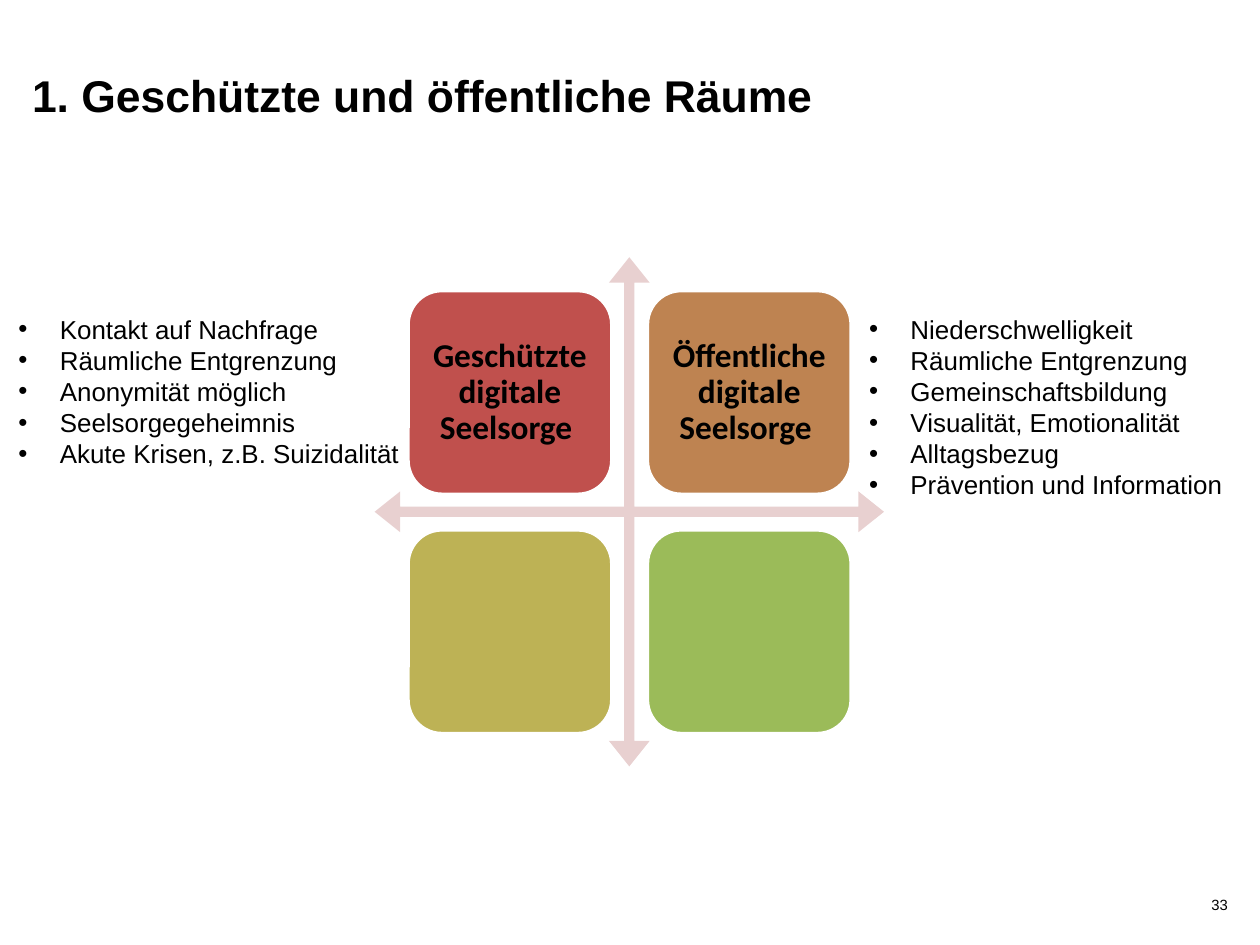
from dataclasses import dataclass

from lxml.etree import SubElement
from pptx import Presentation
from pptx.dml.color import RGBColor
from pptx.enum.shapes import MSO_SHAPE as Shape
from pptx.enum.text import MSO_ANCHOR as Anchor, MSO_AUTO_SIZE as Fit, PP_ALIGN as Align
from pptx.oxml.ns import qn
from pptx.shapes.autoshape import Shape as Box
from pptx.slide import Slide
from pptx.util import Inches, Length, Pt

BLACK = RGBColor(0x00, 0x00, 0x00)
WHITE = RGBColor(0xFF, 0xFF, 0xFF)
ROSE = RGBColor(0xE8, 0xD0, 0xD0)
RED = RGBColor(0xC0, 0x50, 0x4D)
BROWN = RGBColor(0xBE, 0x83, 0x51)
OLIVE = RGBColor(0xBD, 0xB2, 0x55)
GREEN = RGBColor(0x9B, 0xBB, 0x59)

LEFT, TOP = 3.06, 2.18
SIDE, STEP = 1.53, 1.795
INDENT = Inches(0.31)


@dataclass
class Tile:
    color: RGBColor
    label: str = ""


@dataclass
class Points:
    left: float
    width: float
    height: float
    items: list[str]


TILES = [
    Tile(RED, "Geschützte digitale Seelsorge "),
    Tile(BROWN, "Öffentliche digitale Seelsorge "),
    Tile(OLIVE),
    Tile(GREEN),
]

LISTS = [
    Points(6.42, 3.15, 1.51, [
        "Niederschwelligkeit",
        "Räumliche Entgrenzung",
        "Gemeinschaftsbildung",
        "Visualität, Emotionalität",
        "Alltagsbezug",
        "Prävention und Information",
    ]),
    Points(0.04, 3.19, 1.28, [
        "Kontakt auf Nachfrage",
        "Räumliche Entgrenzung",
        "Anonymität möglich",
        "Seelsorgegeheimnis",
        "Akute Krisen, z.B. Suizidalität",
    ]),
]


def write(box: Box, lines: list[str], *, size: int, font: str = "Arial",
          bold: bool = False, align: Align = Align.LEFT,
          anchor: Anchor = Anchor.TOP, inset: float | None = None,
          pitch: float | Length | None = None, bullet: bool = False,
          fit: Fit = Fit.NONE) -> None:
    frame = box.text_frame
    frame.word_wrap = True
    frame.auto_size = fit
    frame.vertical_anchor = anchor
    if inset is not None:
        frame.margin_left = frame.margin_right = Inches(inset)
        frame.margin_top = frame.margin_bottom = Inches(inset)
    for i, line in enumerate(lines):
        para = frame.add_paragraph() if i else frame.paragraphs[0]
        para.alignment = align
        para.line_spacing = pitch
        if bullet:
            props = para._p.get_or_add_pPr()
            props.set("marL", str(INDENT))
            props.set("indent", str(-INDENT))
            SubElement(props, qn("a:buFont"), typeface="Arial")
            SubElement(props, qn("a:buChar"), char="•")
        run = para.add_run()
        run.text = line
        run.font.name = font
        run.font.size = Pt(size)
        run.font.bold = bold
        run.font.color.rgb = BLACK


def add_box(slide: Slide, left: float, top: float, width: float,
            height: float) -> Box:
    return slide.shapes.add_textbox(
        Inches(left), Inches(top), Inches(width), Inches(height))


def add_shape(slide: Slide, kind: Shape, left: float, top: float,
              side: float, color: RGBColor) -> Box:
    shape = slide.shapes.add_shape(
        kind, Inches(left), Inches(top), Inches(side), Inches(side))
    shape.shadow.inherit = False
    shape.fill.solid()
    shape.fill.fore_color.rgb = color
    shape.line.fill.background()
    return shape


def add_tile(slide: Slide, index: int, tile: Tile) -> None:
    row, col = divmod(index, 2)
    shape = add_shape(slide, Shape.ROUNDED_RECTANGLE, LEFT + col * STEP,
                      TOP + row * STEP, SIDE, tile.color)
    shape.line.color.rgb = WHITE
    shape.line.width = Pt(2)
    if tile.label:
        write(shape, [tile.label], size=18, font="Calibri", bold=True,
              align=Align.CENTER, anchor=Anchor.MIDDLE, inset=0.07, pitch=0.9)


def main() -> None:
    deck = Presentation()
    deck.slide_width, deck.slide_height = Inches(9.45), Inches(7.09)
    slide = deck.slides.add_slide(deck.slide_layouts[5])

    title = slide.shapes.title
    title.left, title.top = Inches(0.24), Inches(0.51)
    title.width, title.height = Inches(6.58), Inches(1.18)
    write(title, ["1. Geschützte und öffentliche Räume"], size=24, bold=True,
          inset=0, pitch=Pt(29))

    cross = add_shape(slide, Shape.QUAD_ARROW, 2.81, 1.93, 3.82, ROSE)
    for i, value in enumerate((0.02, 0.04, 0.05)):
        cross.adjustments[i] = value
    for i, tile in enumerate(TILES):
        add_tile(slide, i, tile)

    number = add_box(slide, 6.77, 6.69, 2.44, 0.16)
    write(number, ["33"], size=8, align=Align.RIGHT, anchor=Anchor.BOTTOM, inset=0)

    for points in LISTS:
        box = add_box(slide, points.left, 2.3, points.width, points.height)
        write(box, points.items, size=14, bullet=True, fit=Fit.SHAPE_TO_FIT_TEXT)

    deck.save("out.pptx")


if __name__ == "__main__":
    main()
